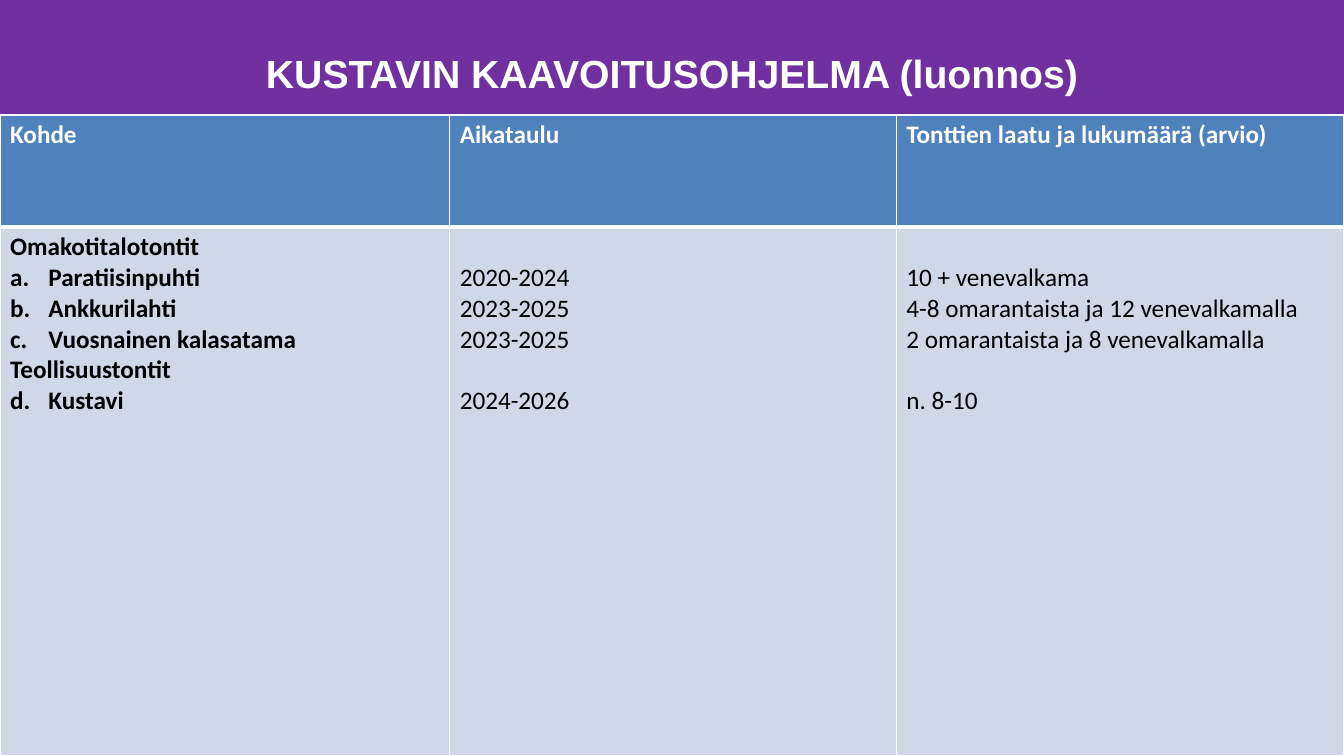
from lxml.etree import SubElement
from pptx import Presentation
from pptx.dml.color import RGBColor
from pptx.enum.shapes import MSO_SHAPE
from pptx.enum.text import MSO_ANCHOR, PP_ALIGN
from pptx.oxml.ns import qn
from pptx.util import Inches, Pt

COLORS = {
    "banner": "7030A0",
    "header": "4F81BD",
    "body": "D0D8E8",
    "white": "FFFFFF",
    "black": "000000",
}
WIDTH, HEIGHT = 13.33, 7.5
BANNER_HEIGHT = 1.14
TITLE_TOP = 0.3
COLUMN_WIDTHS = (4.46, 4.43, 4.44)
HEADER_HEIGHT = 1.11
LINE_POINTS = 22
MARGIN = 0.05
INDENT = 0.38

TITLE = "KUSTAVIN KAAVOITUSOHJELMA (luonnos)"
HEADERS = ("Kohde", "Aikataulu", "Tonttien laatu ja lukumäärä (arvio)")
GROUPS = (
    ("Omakotitalotontit", (
        ("Paratiisinpuhti", "2020-2024", "10 + venevalkama"),
        ("Ankkurilahti", "2023-2025", "4-8 omarantaista ja 12 venevalkamalla"),
        ("Vuosnainen kalasatama", "2023-2025", "2 omarantaista ja 8 venevalkamalla"),
    )),
    ("Teollisuustontit", (("Kustavi", "2024-2026", "n. 8-10"),)),
)


def color(name):
    return RGBColor.from_string(COLORS[name])


def add_letter(para, number):
    properties = para._p.get_or_add_pPr()
    properties.set("marL", str(Inches(INDENT)))
    properties.set("indent", str(-Inches(INDENT)))
    SubElement(properties, qn("a:buFont"), typeface="+mj-lt")
    SubElement(properties, qn("a:buAutoNum"), type="alphaLcPeriod", startAt=str(number))


def write(frame, text, font="Calibri", size=18, bold=False, ink="black",
          align=PP_ALIGN.LEFT, before=0, start=None):
    fresh = not frame.paragraphs[0].runs
    para = frame.paragraphs[0] if fresh else frame.add_paragraph()
    para.alignment = align
    if before:
        para.space_before = Pt(before)
    if start:
        add_letter(para, start)
    span = para.add_run()
    span.text = text
    span.font.name = font
    span.font.size = Pt(size)
    span.font.bold = bold
    span.font.color.rgb = color(ink)


def style_cell(cell, fill, top, bottom):
    properties = cell._tc.get_or_add_tcPr()
    for side, points in (("L", 1), ("R", 1), ("T", top), ("B", bottom)):
        line = SubElement(properties, qn(f"a:ln{side}"), w=str(Pt(points)))
        paint = SubElement(line, qn("a:solidFill"))
        SubElement(paint, qn("a:srgbClr"), val=COLORS["white"])
    cell.fill.solid()
    cell.fill.fore_color.rgb = color(fill)


def add_banner(page, left, top, width, height):
    banner = page.shapes.add_shape(
        MSO_SHAPE.RECTANGLE, Inches(left), Inches(top), Inches(width), Inches(height))
    banner.shadow.inherit = False
    banner.fill.solid()
    banner.fill.fore_color.rgb = color("banner")
    banner.line.fill.background()
    box = page.shapes.add_textbox(
        Inches(left), Inches(top + TITLE_TOP), Inches(width), Inches(height - TITLE_TOP))
    box.text_frame.word_wrap = True
    box.text_frame.vertical_anchor = MSO_ANCHOR.MIDDLE
    write(box.text_frame, TITLE, font="Arial", size=28, bold=True, ink="white",
          align=PP_ALIGN.CENTER)


def fill_targets(frame):
    number = 1
    for heading, plots in GROUPS:
        write(frame, heading, bold=True)
        for plot in plots:
            write(frame, plot[0], bold=True, start=number)
        number += len(plots)


def fill_details(cell, column):
    cell.margin_top = Inches(MARGIN) + Pt(LINE_POINTS)
    for group, (heading, plots) in enumerate(GROUPS):
        for row, plot in enumerate(plots):
            opens_group = group > 0 and row == 0
            write(cell.text_frame, plot[column], before=LINE_POINTS if opens_group else 0)


def add_schedule(page, left, top, width, height):
    table = page.shapes.add_table(
        2, len(HEADERS), Inches(left), Inches(top), Inches(width), Inches(height)).table
    table.rows[0].height = Inches(HEADER_HEIGHT)
    table.rows[1].height = Inches(height - HEADER_HEIGHT)
    for column, heading in enumerate(HEADERS):
        table.columns[column].width = Inches(COLUMN_WIDTHS[column])
        header, body = table.cell(0, column), table.cell(1, column)
        style_cell(header, "header", top=1, bottom=3)
        style_cell(body, "body", top=3, bottom=1)
        write(header.text_frame, heading, bold=True, ink="white")
        if column == 0:
            fill_targets(body.text_frame)
        else:
            fill_details(body, column)


def main():
    deck = Presentation()
    deck.slide_width, deck.slide_height = Inches(WIDTH), Inches(HEIGHT)
    page = deck.slides.add_slide(deck.slide_layouts[6])
    add_banner(page, 0, 0, WIDTH, BANNER_HEIGHT)
    add_schedule(page, 0, BANNER_HEIGHT, WIDTH, HEIGHT - BANNER_HEIGHT)
    deck.save("out.pptx")


if __name__ == "__main__":
    main()
